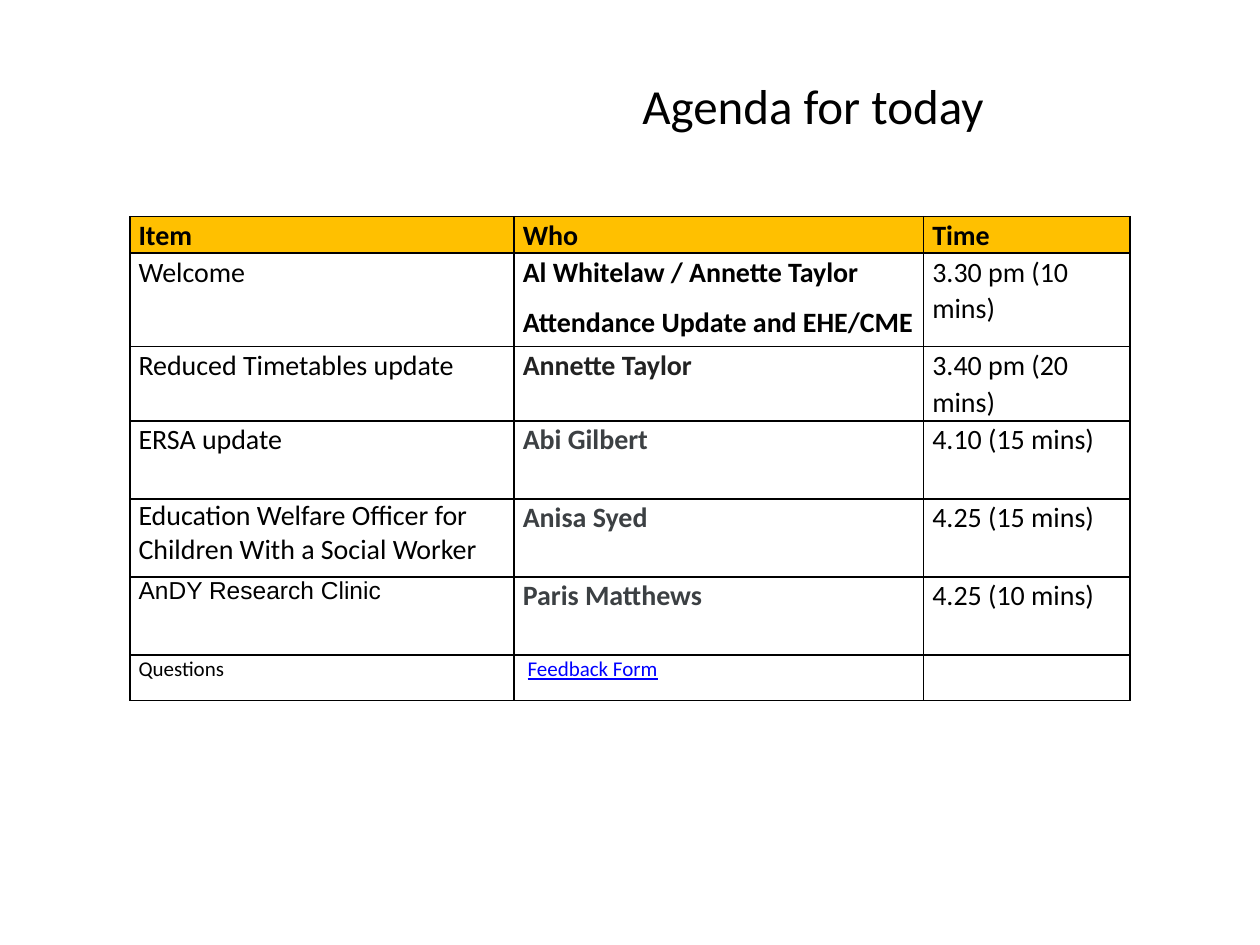
from lxml import etree
from pptx import Presentation
from pptx.dml.color import RGBColor
from pptx.enum.text import MSO_ANCHOR, PP_ALIGN
from pptx.oxml.ns import qn
from pptx.util import Inches, Pt

LEFT = PP_ALIGN.LEFT
MIDDLE = MSO_ANCHOR.MIDDLE

BLACK = RGBColor(0x00, 0x00, 0x00)
INK = RGBColor(0x22, 0x22, 0x22)
GREY = RGBColor(0x3C, 0x40, 0x43)
BLUE = RGBColor(0x00, 0x00, 0xFF)
GOLD = RGBColor(0xFF, 0xC0, 0x00)

COLS = [3.05, 3.25, 1.64]
ROWS = [0.29, 0.74, 0.59, 0.62, 0.62, 0.62, 0.36]


class Deck:
    """Holds the text style and the current slide."""

    font = "Calibri"
    size = 16

    def __init__(self, width, height):
        self.prs = Presentation()
        self.prs.slide_width = Inches(width)
        self.prs.slide_height = Inches(height)
        self.slide = self.prs.slides.add_slide(self.prs.slide_layouts[6])

    def run(self, para, text, size=None, font=None, color=BLACK, bold=False, line=False):
        run = para.add_run()
        run.text = text
        run.font.size = Pt(size or self.size)
        run.font.name = font or self.font
        run.font.color.rgb = color
        run.font.bold = bold
        run.font.underline = line

    def title(self, text, x, y, w, h):
        box = self.slide.shapes.add_textbox(Inches(x), Inches(y), Inches(w), Inches(h))
        frame = box.text_frame
        frame.word_wrap = True
        frame.vertical_anchor = MIDDLE
        para = frame.paragraphs[0]
        para.alignment = LEFT
        self.run(para, text, size=28)

    def table(self, x, y, cols, rows):
        frame = self.slide.shapes.add_table(
            len(rows), len(cols), Inches(x), Inches(y), Inches(sum(cols)), Inches(sum(rows)))
        table = frame.table
        for col, width in zip(table.columns, cols):
            col.width = Inches(width)
        for row, height in zip(table.rows, rows):
            row.height = Inches(height)
        return table

    def cell(self, cell, paras, fill=None, tight=False):
        cell.margin_left = cell.margin_right = Inches(0.07)
        cell.margin_top = cell.margin_bottom = 0
        self.border(cell)
        if fill is None:
            cell.fill.background()
        else:
            cell.fill.solid()
            cell.fill.fore_color.rgb = fill
        frame = cell.text_frame
        for i, runs in enumerate(paras):
            para = frame.add_paragraph() if i else frame.paragraphs[0]
            if not tight:
                para.line_spacing = 1.07
                para.space_after = Pt(8)
            for text, style in runs:
                self.run(para, text, **style)

    def border(self, cell):
        props = cell._tc.get_or_add_tcPr()
        for side in ("lnL", "lnR", "lnT", "lnB"):
            line = etree.SubElement(props, qn("a:" + side), w=str(Pt(1)))
            fill = etree.SubElement(line, qn("a:solidFill"))
            etree.SubElement(fill, qn("a:srgbClr"), val=str(BLACK))


def one(text, **style):
    """A cell with a single paragraph of one run."""
    return [[(text, style)]]


def who(*names, color=BLACK):
    """A cell with one bold paragraph for each name."""
    return [[(name, {"bold": True, "color": color})] for name in names]


def main():
    deck = Deck(10, 7.5)
    deck.title("Agenda for today", 5, 0.25, 3.25, 1.17)

    # Agenda: item, who, time
    agenda = [
        [who("Item"), who("Who"), who("Time")],
        [one("Welcome"),
         who("Al Whitelaw / Annette Taylor", "Attendance Update and EHE/CME"),
         one("3.30 pm (10 mins)")],
        [one("Reduced Timetables update"), who("Annette Taylor", color=INK),
         one("3.40 pm (20 mins)")],
        [one("ERSA update"), who("Abi Gilbert", color=GREY), one("4.10 (15 mins)")],
        [one("Education Welfare Officer for Children With a Social Worker"),
         who("Anisa Syed", color=GREY), one("4.25 (15 mins)")],
        [one("AnDY Research Clinic", size=14, font="Arial"),
         who("Paris Matthews", color=GREY), one("4.25 (10 mins)")],
        [one("Questions", size=12),
         [[(" ", {"size": 12}),
           ("Feedback Form", {"size": 12, "color": BLUE, "line": True})]],
         []],
    ]
    tight = {(4, 0), (5, 0)}  # single-spaced cells

    # Table
    table = deck.table(1.03, 1.72, COLS, ROWS)
    for r, row in enumerate(agenda):
        for c, paras in enumerate(row):
            deck.cell(table.cell(r, c), paras,
                      fill=None if r else GOLD, tight=(r, c) in tight)

    deck.prs.save("out.pptx")


if __name__ == "__main__":
    main()
